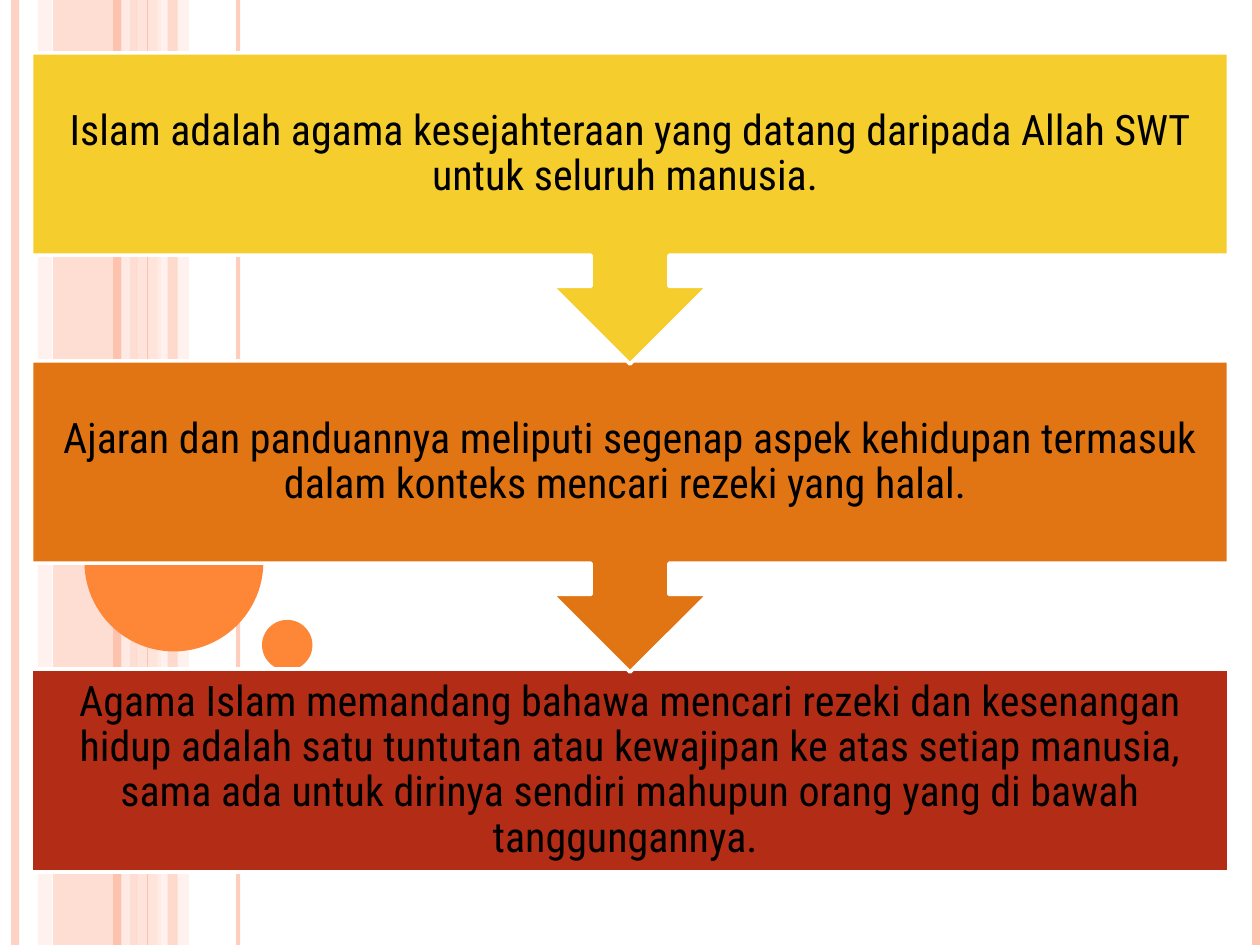
from lxml.etree import SubElement
from pptx import Presentation
from pptx.dml.color import RGBColor
from pptx.enum.shapes import MSO_CONNECTOR, MSO_SHAPE
from pptx.enum.text import MSO_ANCHOR, PP_ALIGN
from pptx.oxml.ns import qn
from pptx.util import Inches, Pt

COLORS = {
    "salmon": "FEC3AE",
    "blush": "FFD9CE",
    "mist": "FFEDE8",
    "orange": "FE8637",
    "yellow": "F5CD2D",
    "amber": "E27513",
    "red": "B32C16",
    "white": "FFFFFF",
    "black": "000000",
}
BANDS = [
    (0.42, 0.67, "salmon", 54),
    (0.3, 0.11, "blush", 36),
    (1.08, 0.2, "blush", 70),
    (1.25, 0.25, "mist", 71),
]
STRIPES = [
    (0.12, 4.5, "salmon", 73),
    (1, 4.5, "mist", 83),
    (0.93, 4.5, "salmon", 100),
    (1.89, 2.25, "salmon", 82),
    (1.17, 0.75, "salmon", 100),
    (9.97, 4.5, "salmon", 100),
]
NARROW_BAND = (1.33, 0.08, "salmon", 51)
CIRCLES = [(0.67, 3.75, 1.42), (2.08, 4.92, 0.4)]
STEPS = [
    ("Islam adalah agama kesejahteraan yang datang daripada Allah SWT "
     "untuk seluruh manusia. ", "yellow"),
    ("Ajaran dan panduannya meliputi segenap aspek kehidupan termasuk "
     "dalam konteks mencari rezeki yang halal. ", "amber"),
    ("Agama Islam memandang bahawa mencari rezeki dan kesenangan hidup "
     "adalah satu tuntutan atau kewajipan ke atas setiap manusia, sama ada "
     "untuk dirinya sendiri mahupun orang yang di bawah tanggungannya. ", "red"),
]
STEP_PITCH = 2.445
BODY_HEIGHT = 1.61
CALLOUT_HEIGHT = 2.47


def rgb(name):
    """Return the named colour."""
    return RGBColor.from_string(COLORS[name])


def set_opacity(part, percent):
    """Make the only solid colour of a band or stripe partly transparent."""
    if percent < 100:
        color = next(part._element.spPr.iter(qn("a:srgbClr")))
        SubElement(color, qn("a:alpha"), val=str(percent * 1000))


def add_filled(slide, kind, left, top, width, height, color):
    """Add a flat preset shape without an outline."""
    shape = slide.shapes.add_shape(
        kind, Inches(left), Inches(top), Inches(width), Inches(height))
    shape.shadow.inherit = False
    shape.fill.solid()
    shape.fill.fore_color.rgb = rgb(color)
    shape.line.fill.background()
    return shape


def add_band(slide, left, top, height, offset, width, color, opacity):
    """Add a full-height translucent band."""
    band = add_filled(slide, MSO_SHAPE.RECTANGLE, left + offset, top, width, height, color)
    set_opacity(band, opacity)


def add_stripe(slide, left, top, height, offset, weight, color, opacity):
    """Add a full-height vertical line."""
    x = Inches(left + offset)
    stripe = slide.shapes.add_connector(
        MSO_CONNECTOR.STRAIGHT, x, Inches(top), x, Inches(top + height))
    stripe.line.width = Pt(weight)
    stripe.line.color.rgb = rgb(color)
    set_opacity(stripe, opacity)
    SubElement(stripe._element.spPr, qn("a:effectLst"))


def add_backdrop(slide, left, top, height):
    """Draw the bands, stripes and circles of the backdrop."""
    for band in BANDS:
        add_band(slide, left, top, height, *band)
    for stripe in STRIPES:
        add_stripe(slide, left, top, height, *stripe)
    add_band(slide, left, top, height, *NARROW_BAND)
    for x, y, size in CIRCLES:
        add_filled(slide, MSO_SHAPE.OVAL, left + x, top + y, size, size, "orange")


def add_step(slide, left, top, width, wording, color, is_last):
    """Draw one step, with a down arrow unless it is the last."""
    kind = MSO_SHAPE.RECTANGLE if is_last else MSO_SHAPE.UP_ARROW_CALLOUT
    height = BODY_HEIGHT if is_last else CALLOUT_HEIGHT
    body = add_filled(slide, kind, left, top, width, height, color)
    body.rotation = 0 if is_last else 180
    body.line.color.rgb = rgb("white")
    body.line.width = Pt(2)

    label = slide.shapes.add_textbox(
        Inches(left), Inches(top), Inches(width), Inches(BODY_HEIGHT))
    frame = label.text_frame
    frame.word_wrap = True
    frame.vertical_anchor = MSO_ANCHOR.MIDDLE
    frame.margin_left = frame.margin_right = Inches(0.19)
    frame.margin_top = frame.margin_bottom = Inches(0.19)
    paragraph = frame.paragraphs[0]
    paragraph.text = wording
    paragraph.alignment = PP_ALIGN.CENTER
    paragraph.line_spacing = 0.9
    paragraph.font.name = "Roboto Condensed"
    paragraph.font.size = Pt(24)
    paragraph.font.color.rgb = rgb("black")


def add_process(slide, left, top, width):
    """Stack the steps from the last up, so that each arrow overlaps the next step."""
    last = len(STEPS) - 1
    for index in range(last, -1, -1):
        wording, color = STEPS[index]
        add_step(slide, left, top + index * STEP_PITCH, width, wording, color, index == last)


def main():
    """Build and save the slide."""
    presentation = Presentation()
    presentation.slide_width = Inches(10)
    presentation.slide_height = Inches(7.5)
    slide = presentation.slides.add_slide(presentation.slide_layouts[6])
    add_backdrop(slide, 0, 0, 7.5)
    add_process(slide, 0.25, 0.42, 9.5)
    presentation.save("out.pptx")


if __name__ == "__main__":
    main()
